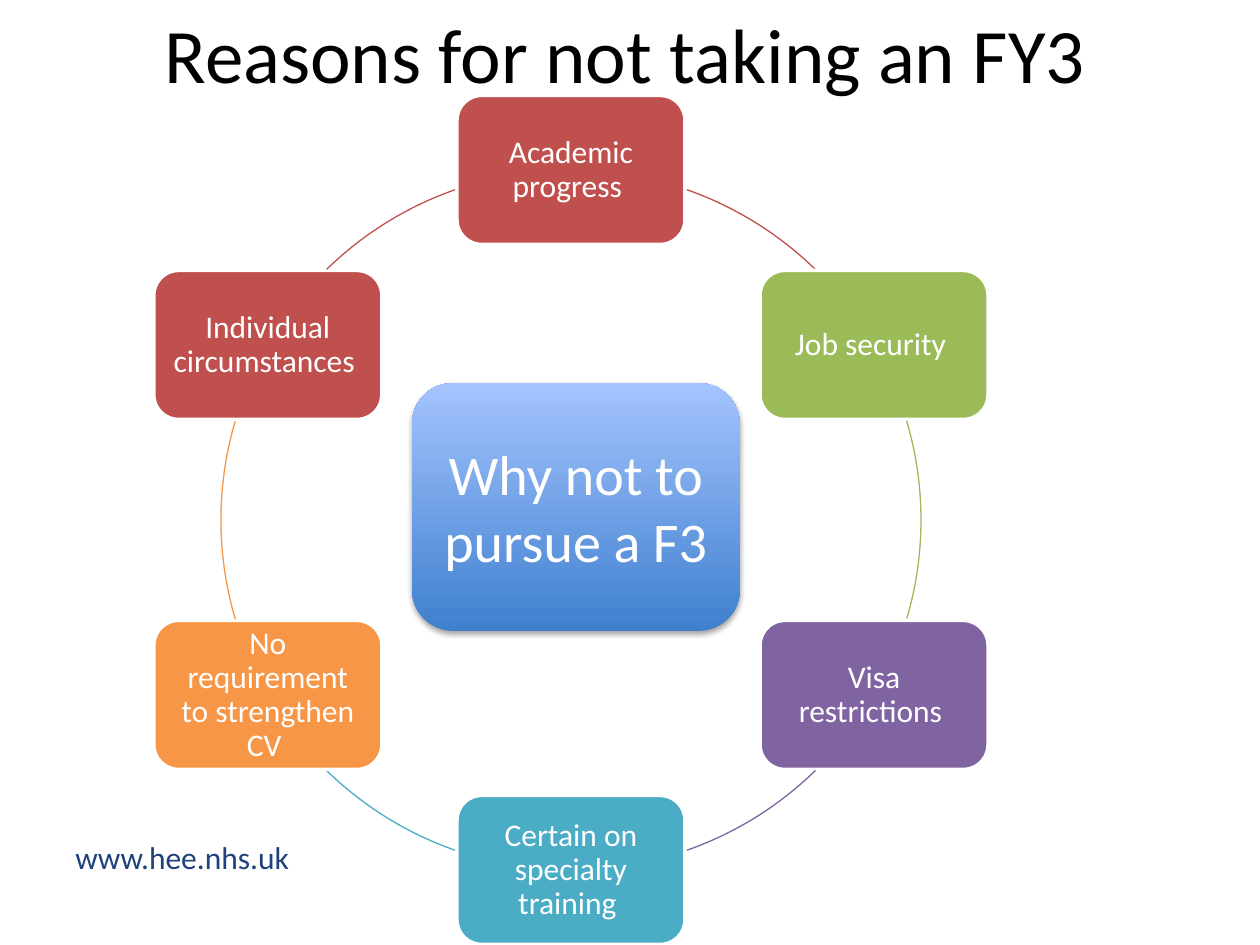
from math import cos, radians, sin

from lxml.etree import SubElement
from pptx import Presentation
from pptx.dml.color import RGBColor
from pptx.enum.shapes import MSO_SHAPE
from pptx.enum.text import MSO_ANCHOR, MSO_AUTO_SIZE, PP_ALIGN
from pptx.oxml.ns import qn
from pptx.util import Emu, Pt

EMU_PER_PX = 7257.14  # 126 px to the inch
FONT = "Calibri"
COLOURS = {
    "title": "000000", "white": "FFFFFF", "address": "1E427B",
    "red": "C0504D", "green": "9BBB59", "purple": "8064A2",
    "teal": "4BACC6", "orange": "F79646",
    "blue_low": "3F80CE", "blue_high": "A4C4FF", "shadow": "000000",
}
RING_X, RING_Y, RING_RADIUS = 571, 520, 350
NODE_WIDTH, NODE_HEIGHT = 228, 149
# Clockwise from the top; each colour also serves the arc to the next reason.
REASONS = [
    ("Academic progress ", "red"),
    ("Job security ", "green"),
    ("Visa restrictions ", "purple"),
    ("Certain on specialty training ", "teal"),
    ("No requirement to strengthen CV ", "orange"),
    ("Individual circumstances ", "red"),
]
# Visible start and end of each arc in degrees, clockwise from three o'clock.
ARCS = [(289.35, 314.3), (343.5, 16.5), (45.7, 70.65),
        (109.35, 134.3), (163.5, 196.5), (225.7, 250.65)]


def px(length):
    return Emu(round(length * EMU_PER_PX))


def colour(name):
    return RGBColor.from_string(COLOURS[name])


def write(text_frame, text, size, colour_name, align=PP_ALIGN.CENTER):
    paragraph = text_frame.paragraphs[0]
    paragraph.alignment = align
    run = paragraph.add_run()
    run.text = text
    run.font.size = Pt(size)
    run.font.name = FONT
    run.font.color.rgb = colour(colour_name)
    return paragraph


def add_preset(slide, preset, left, top, width, height):
    shape = slide.shapes.add_shape(preset, px(left), px(top), px(width), px(height))
    shape.shadow.inherit = False
    return shape


def add_title(slide, text):
    title = slide.shapes.title
    title.left, title.top, title.width, title.height = px(67), px(0), px(1134), px(158)
    frame = title.text_frame
    frame.auto_size = MSO_AUTO_SIZE.NONE
    frame.vertical_anchor = MSO_ANCHOR.TOP
    write(frame, text, 44, "title")


def add_address(slide, text):
    box = slide.shapes.add_textbox(px(63), px(832), px(258), px(50))
    box.text_frame.word_wrap = False
    write(box.text_frame, text, 18, "address", PP_ALIGN.LEFT)


def add_reason(slide, text, fill_name, angle):
    """Place one rounded box centred on the ring at the given angle."""
    centre_x = RING_X + RING_RADIUS * cos(radians(angle))
    centre_y = RING_Y + RING_RADIUS * sin(radians(angle))
    node = add_preset(slide, MSO_SHAPE.ROUNDED_RECTANGLE,
                      centre_x - NODE_WIDTH / 2, centre_y - NODE_HEIGHT / 2,
                      NODE_WIDTH, NODE_HEIGHT)
    node.fill.solid()
    node.fill.fore_color.rgb = colour(fill_name)
    node.line.color.rgb = colour("white")
    node.line.width = Pt(2)
    frame = node.text_frame
    frame.word_wrap = True
    frame.vertical_anchor = MSO_ANCHOR.MIDDLE
    frame.margin_left = frame.margin_right = px(10)
    frame.margin_top = frame.margin_bottom = px(10)
    write(frame, text, 18, "white").line_spacing = 0.9


def add_arc(slide, line_name, start, end):
    arc = add_preset(slide, MSO_SHAPE.ARC, RING_X - RING_RADIUS, RING_Y - RING_RADIUS,
                     2 * RING_RADIUS, 2 * RING_RADIUS)
    # Adjustments are scaled by 100000, arc angles by 60000.
    arc.adjustments[0] = start * 0.6
    arc.adjustments[1] = end * 0.6
    arc.fill.background()
    arc.line.color.rgb = colour(line_name)
    arc.line.width = Pt(0.75)


def add_drop_shadow(shape):
    effects = shape._element.spPr.find(qn("a:effectLst"))
    shadow = SubElement(effects, qn("a:outerShdw"), blurRad=str(Pt(3.1)),
                        dist=str(Pt(1.8)), dir="5400000", rotWithShape="0")
    shade = SubElement(shadow, qn("a:srgbClr"), val=COLOURS["shadow"])
    SubElement(shade, qn("a:alpha"), val="35000")


def add_question(slide, text):
    box = add_preset(slide, MSO_SHAPE.ROUNDED_RECTANGLE, 412, 383, 328, 248)
    box.fill.gradient()
    box.fill.gradient_angle = 90
    for stop, position, name in zip(box.fill.gradient_stops, (0, 1),
                                    ("blue_low", "blue_high")):
        stop.position = position
        stop.color.rgb = colour(name)
    box.line.fill.background()
    add_drop_shadow(box)
    box.text_frame.word_wrap = True
    box.text_frame.vertical_anchor = MSO_ANCHOR.MIDDLE
    write(box.text_frame, text, 32, "white")


def main():
    presentation = Presentation()
    presentation.slide_width, presentation.slide_height = px(1260), px(945)
    slide = presentation.slides.add_slide(presentation.slide_layouts[5])
    add_address(slide, "www.hee.nhs.uk")
    add_title(slide, "Reasons for not taking an FY3 ")
    for index, ((text, name), (start, end)) in enumerate(zip(REASONS, ARCS)):
        add_reason(slide, text, name, index * 360 / len(REASONS) - 90)
        add_arc(slide, name, start, end)
    add_question(slide, "Why not to pursue a F3")
    presentation.save("out.pptx")


if __name__ == "__main__":
    main()
